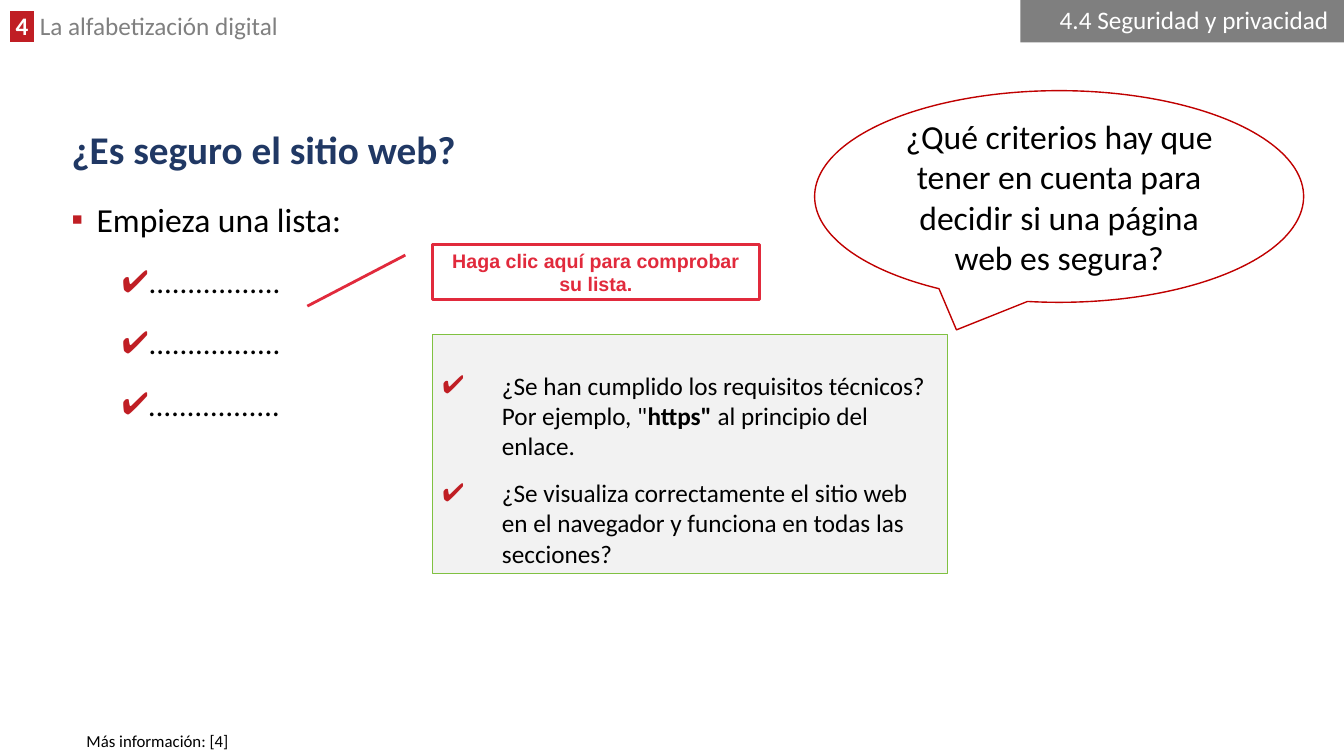
from lxml import etree
from pptx import Presentation
from pptx.dml.color import RGBColor
from pptx.enum.shapes import MSO_SHAPE as Shape
from pptx.enum.text import MSO_ANCHOR as Anchor, PP_ALIGN as Align
from pptx.oxml.ns import qn
from pptx.util import Inches, Pt


def rgb(color):
    return RGBColor.from_string(color)


class LessonSlide:
    FONT = "Calibri"
    RED, GRAY, NAVY = "C01E24", "7F7F7F", "203864"
    BLACK, WHITE = "000000", "FFFFFF"

    def __init__(self, deck):
        self.slide = deck.slides.add_slide(deck.slide_layouts[5])

    def style(self, font, size, color, bold=False, name=FONT):
        font.name, font.size, font.bold = name, Pt(size), bold
        font.color.rgb = rgb(color)

    def bullet(self, paragraph, mark, left, hanging):
        props = paragraph._p.get_or_add_pPr()
        props.set("marL", str(Inches(left)))
        props.set("indent", str(-Inches(hanging)))
        color = etree.SubElement(props, qn("a:buClr"))
        etree.SubElement(color, qn("a:srgbClr"), val=self.RED)
        etree.SubElement(props, qn("a:buFont"), typeface="Arial")
        etree.SubElement(props, qn("a:buChar"), char=mark)

    def highlight(self, run, color):
        mark = etree.Element(qn("a:highlight"))
        etree.SubElement(mark, qn("a:srgbClr"), val=color)
        run._r.rPr.find(qn("a:solidFill")).addnext(mark)

    def title(self, text, box):
        heading = self.slide.shapes.title
        heading.left, heading.top, heading.width, heading.height = map(Inches, box)
        frame = heading.text_frame
        frame.text, frame.vertical_anchor = text, Anchor.MIDDLE
        line = frame.paragraphs[0]
        line.alignment, line.line_spacing = Align.LEFT, 0.9
        self.style(line.font, 28, self.NAVY, bold=True)

    def text_box(self, box):
        frame = self.slide.shapes.add_textbox(*map(Inches, box)).text_frame
        frame.word_wrap = True
        return frame

    def panel(self, kind, box, fill, line=None, width=1):
        panel = self.slide.shapes.add_shape(kind, *map(Inches, box))
        panel.shadow.inherit = False
        panel.fill.solid()
        panel.fill.fore_color.rgb = rgb(fill)
        if line:
            panel.line.color.rgb, panel.line.width = rgb(line), Pt(width)
        else:
            panel.line.fill.background()
        panel.text_frame.word_wrap = True
        panel.text_frame.vertical_anchor = Anchor.MIDDLE
        return panel

    def put_text(self, frame, text, size, color, align=Align.LEFT, **look):
        line = frame.paragraphs[0]
        line.text, line.alignment = text, align
        self.style(line.font, size, color, **look)
        return line

    def chapter(self, number, name, box):
        line = self.text_box(box).paragraphs[0]
        line.line_spacing = 0.8
        badge, label = line.add_run(), line.add_run()
        badge.text, label.text = f" {number} ", f" {name}"
        self.style(badge.font, 18, self.WHITE, bold=True)
        self.style(label.font, 18, "808080")
        self.highlight(badge, self.RED)

    def own_list(self, intro, blanks, box):
        frame = self.text_box(box)
        for i, text in enumerate([intro] + blanks):
            line = frame.add_paragraph() if i else frame.paragraphs[0]
            line.text, line.line_spacing = text, 1.2
            if i:
                line.space_before = Pt(12)
            self.bullet(line, "✔" if i else "▪", 0.75 if i else 0.25, 0.25)
            self.style(line.font, 22 if i else 24, self.BLACK)
        line.font.italic = True

    def checklist(self, questions, box):
        frame = self.panel(Shape.RECTANGLE, box, "F2F2F2", "80C141", 0.75).text_frame
        frame.vertical_anchor = Anchor.TOP
        frame.margin_top, frame.margin_bottom = Inches(0.35), Inches(0)
        for i, parts in enumerate(questions):
            line = frame.add_paragraph() if i else frame.paragraphs[0]
            line.alignment, line.space_after = Align.LEFT, Pt(6)
            if i:
                line.space_before = Pt(6)
            self.bullet(line, "✔", 0.59, 0.59)
            self.style(line.font, 18, self.BLACK)
            for text, bold in parts:
                run = line.add_run()
                run.text = text
                self.style(run.font, 18, self.BLACK, bold)


def main():
    deck = Presentation()
    deck.slide_width, deck.slide_height = Inches(13.33), Inches(7.5)
    page = LessonSlide(deck)

    page.chapter(4, "La alfabetización digital", (0, 0.11, 5.71, 0.34))
    page.title("¿Es seguro el sitio web?", (0.61, 1.18, 12.1, 0.66))

    section = page.panel(Shape.RECTANGLE, (10.12, 0, 3.21, 0.42), page.GRAY)
    page.put_text(section.text_frame, "4.4 Seguridad y privacidad ", 18, page.WHITE,
                  Align.RIGHT).line_spacing = 0.9

    page.own_list("Empieza una lista:", ["................."] * 3,
                  (0.61, 1.84, 7.74, 5.51))
    page.put_text(page.text_box((0.76, 7.2, 12, 0.3)), "Más información: [4]", 12, page.BLACK)

    question = page.panel(Shape.OVAL_CALLOUT, (8.08, 0.9, 4.85, 2.1), page.WHITE, "C00000")
    question.adjustments[0], question.adjustments[1] = -0.21, 0.63
    page.put_text(question.text_frame,
                  "¿Qué criterios hay que tener en cuenta para decidir si una página web es segura?",
                  24, page.BLACK, Align.CENTER)

    page.checklist([
        [("¿Se han cumplido los requisitos técnicos? Por ejemplo, \"", False),
         ("https\" ", True), ("al principio del enlace.", False)],
        [("¿Se visualiza correctamente el sitio web en el navegador y funciona "
          "en todas las secciones?", False)],
    ], (4.29, 3.32, 5.11, 2.37))

    hint = page.panel(Shape.LINE_CALLOUT_1, (4.29, 2.43, 3.24, 0.54), page.WHITE, "E12A3C", 2)
    page.put_text(hint.text_frame, "Haga clic aquí para comprobar su lista.", 14, "E12A3C",
                  Align.CENTER, bold=True, name="Arial")

    deck.save("out.pptx")


if __name__ == "__main__":
    main()
